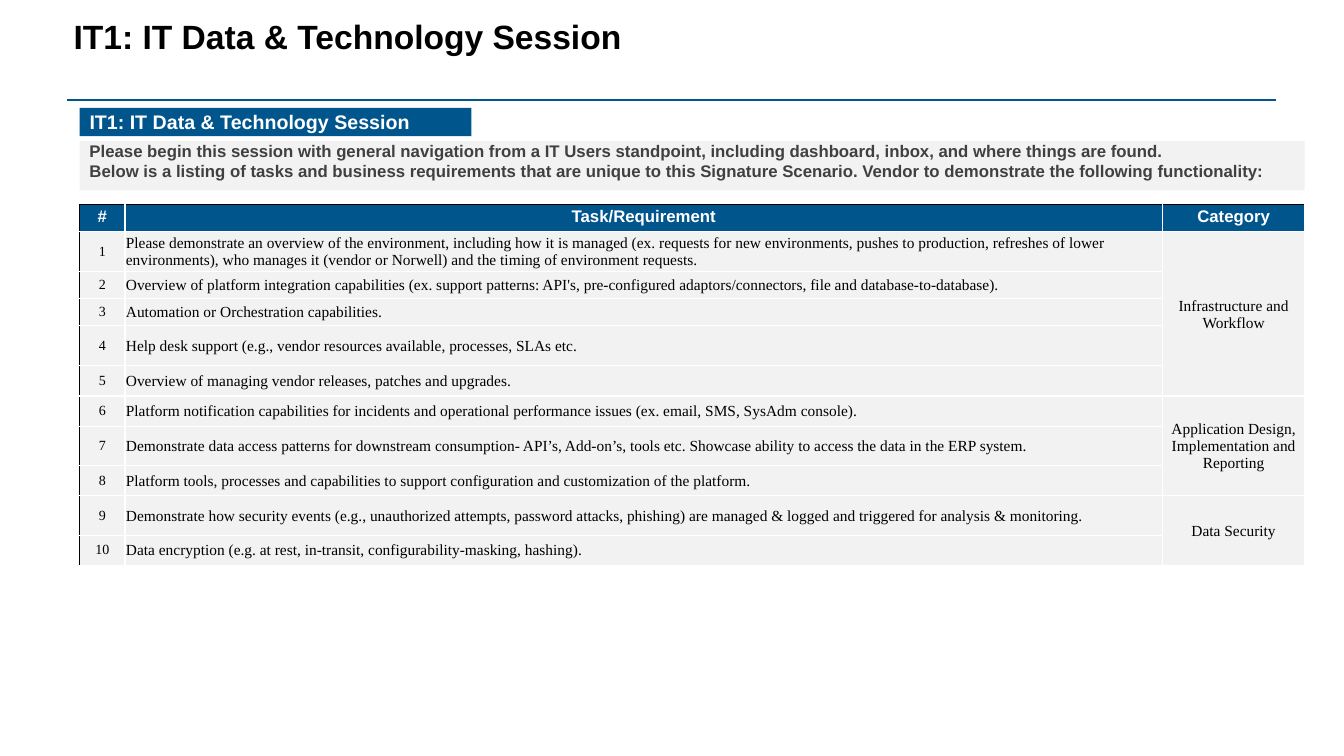
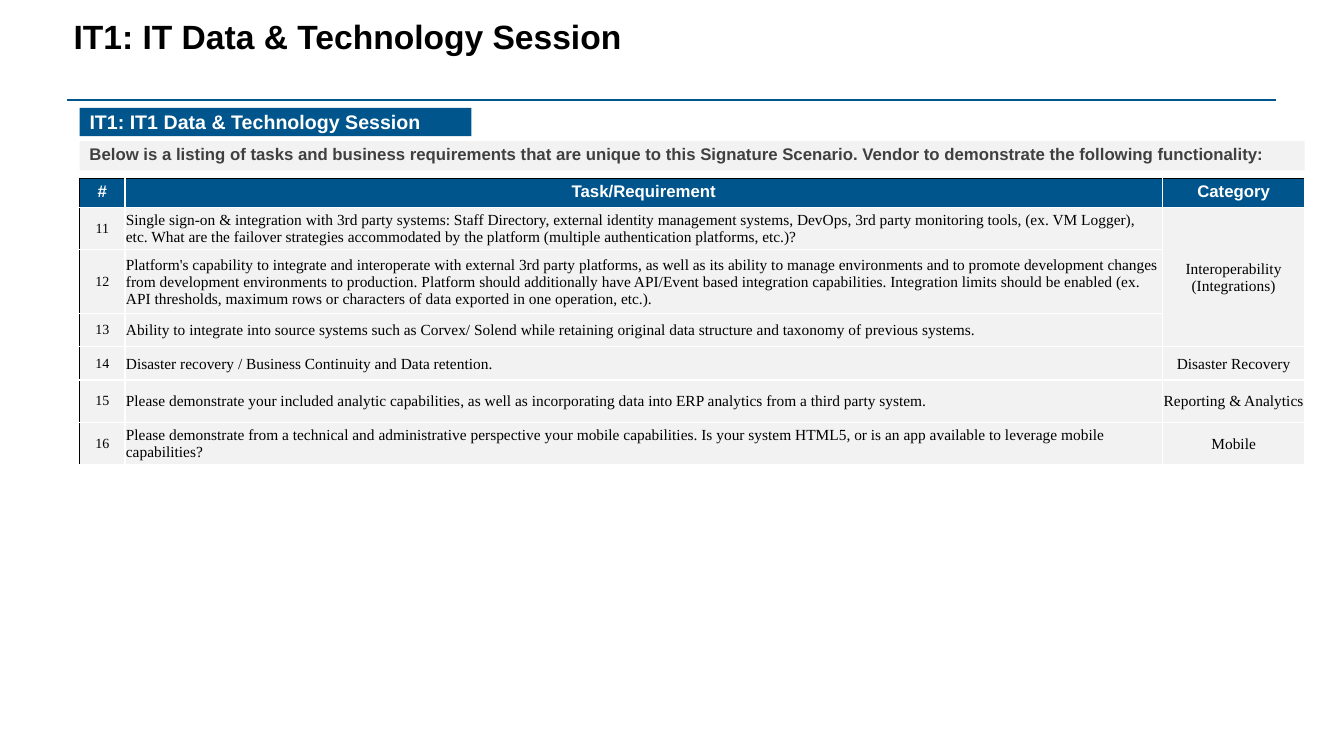
"""Builds the two slides of the data and technology session."""
from pptx import Presentation
from pptx.dml.color import RGBColor
from pptx.enum.shapes import MSO_CONNECTOR as Link, MSO_SHAPE as Shape
from pptx.enum.text import MSO_ANCHOR as Anchor, PP_ALIGN as Align
from pptx.oxml import parse_xml
from pptx.oxml.ns import nsdecls
from pptx.util import Pt

BLUE, GREY, DARK, BLACK, WHITE = "00558C", "F2F2F2", "404040", "000000", "FFFFFF"
LEFT, WIDE = Pt(56.9), Pt(875.5)
COLS = [32.4, 741.6, 101.5]

SANS = {"name": "Arial", "bold": True}
SERIF = {"name": "Times New Roman", "bold": False}
HEAD = {"alignment": Align.CENTER, "line_spacing": Pt(11)}
LOOKS = {
    "title": ({**SANS, "size": Pt(24)}, BLACK,
              {"alignment": Align.LEFT, "line_spacing": 0.9}),
    "bar": ({**SANS, "size": Pt(14)}, WHITE, {"alignment": Align.LEFT}),
    "intro": ({**SANS, "size": Pt(12)}, DARK, {"alignment": Align.LEFT}),
    "head": ({**SANS, "size": Pt(12)}, WHITE, HEAD),
    "num": ({**SERIF, "size": Pt(10)}, BLACK, HEAD),
    "task": ({**SERIF, "size": Pt(11)}, BLACK, {"alignment": Align.LEFT}),
    "group": ({**SERIF, "size": Pt(11)}, BLACK, {"alignment": Align.CENTER}),
}
ROOMY = {"margin_left": Pt(3.6), "margin_right": Pt(3.6),
         "margin_top": Pt(3.6), "margin_bottom": Pt(3.6)}
TIGHT = {"margin_left": Pt(0.7), "margin_right": Pt(0.7),
         "margin_top": Pt(0.7), "margin_bottom": Pt(0)}

TITLE = "IT1: IT Data & Technology Session"
BELOW = ("Below is a listing of tasks and business requirements that are unique to "
         "this Signature Scenario. Vendor to demonstrate the following functionality:")
PAGES = [
    {
        "bar": "IT1: IT Data & Technology Session",
        "intro": ["Please begin this session with general navigation from a IT Users "
                  "standpoint, including dashboard, inbox, and where things are found.",
                  BELOW],
        "strip": 35.3, "text": (97.2, 36), "top": 146.2, "head": 19.4, "first": 1,
        "groups": [
            ("Infrastructure and Workflow", [
                (28.1, "Please demonstrate an overview of the environment, including how "
                       "it is managed (ex. requests for new environments, pushes to "
                       "production, refreshes of lower environments), who manages it "
                       "(vendor or Norwell) and the timing of environment requests."),
                (19.4, "Overview of platform integration capabilities (ex. support "
                       "patterns: API's, pre-configured adaptors/connectors, file and "
                       "database-to-database)."),
                (19.4, "Automation or Orchestration capabilities."),
                (28.8, "Help desk support (e.g., vendor resources available, processes, "
                       "SLAs etc."),
                (21.6, "Overview of managing vendor releases, patches and upgrades."),
            ]),
            ("Application Design, Implementation and Reporting", [
                (21.6, "Platform notification capabilities for incidents and operational "
                       "performance issues (ex. email, SMS, SysAdm console)."),
                (28.1, "Demonstrate data access patterns for downstream consumption- "
                       "API’s, Add-on’s, tools etc. Showcase ability to access the data "
                       "in the ERP system."),
                (21.6, "Platform tools, processes and capabilities to support "
                       "configuration and customization of the platform."),
            ]),
            ("Data Security", [
                (28.1, "Demonstrate how security events (e.g., unauthorized attempts, "
                       "password attacks, phishing) are managed & logged and triggered "
                       "for analysis & monitoring."),
                (21.6, "Data encryption (e.g. at rest, in-transit, "
                       "configurability-masking, hashing)."),
            ]),
        ],
    },
    {
        "bar": "IT1: IT1 Data & Technology Session",
        "intro": [BELOW],
        "strip": 20.9, "text": (99.4, 21.6), "top": 127.4, "head": 20.9, "first": 11,
        "groups": [
            ("Interoperability (Integrations)", [
                (30.2, "Single sign-on & integration with 3rd party systems: Staff "
                       "Directory, external identity management systems, DevOps, 3rd "
                       "party monitoring tools, (ex. VM Logger), etc. What are the "
                       "failover strategies accommodated by the platform (multiple "
                       "authentication platforms, etc.)?"),
                (45.4, "Platform's capability to integrate and interoperate with external "
                       "3rd party platforms, as well as its ability to manage "
                       "environments and to promote development changes from development "
                       "environments to production. Platform should additionally have "
                       "API/Event based integration capabilities. Integration limits "
                       "should be enabled (ex. API thresholds, maximum rows or characters "
                       "of data exported in one operation, etc.)."),
                (23.8, "Ability to integrate into source systems such as Corvex/ Solend "
                       "while retaining original data structure and taxonomy of previous "
                       "systems."),
            ]),
            ("Disaster Recovery", [
                (23.8, "Disaster recovery / Business Continuity and Data retention."),
            ]),
            ("Reporting & Analytics", [
                (30.2, "Please demonstrate your included analytic capabilities, as well "
                       "as incorporating data into ERP analytics from a third party "
                       "system."),
            ]),
            ("Mobile", [
                (30.2, "Please demonstrate from a technical and administrative "
                       "perspective your mobile capabilities. Is your system HTML5, or is "
                       "an app available to leverage mobile capabilities?"),
            ]),
        ],
    },
]


def ink(form, tone):
    if hasattr(form, "solid"):
        form.solid()
        form = form.fore_color
    form.rgb = RGBColor.from_string(tone)


def write(box, lines, look, **frame):
    font, tone, para = LOOKS[look]
    text = box.text_frame
    text.text = "\n".join(lines)
    target = text if hasattr(box, "shape_id") else box
    for key, val in frame.items():
        setattr(target, key, val)
    for item in text.paragraphs:
        for key, val in para.items():
            setattr(item, key, val)
        for key, val in font.items():
            setattr(item.runs[0].font, key, val)
        ink(item.runs[0].font.color, tone)


deck = Presentation()
deck.slide_width, deck.slide_height = Pt(960.5), Pt(540)

for page in PAGES:
    slide = deck.slides.add_slide(deck.slide_layouts[5])
    shapes = slide.shapes

    rule = shapes.add_connector(Link.STRAIGHT, Pt(48.2), Pt(71.6), Pt(912.2), Pt(71.6))
    ink(rule.line.fill, BLUE)
    rule.line.width = Pt(1.5)
    rule._element.spPr.append(parse_xml(f"<a:effectLst {nsdecls('a')}/>"))

    title = shapes.title
    spot = {"left": Pt(45.4), "top": Pt(10.8), "width": Pt(864.7), "height": Pt(46.8)}
    for key, val in spot.items():
        setattr(title, key, val)
    write(title, [TITLE], "title", vertical_anchor=Anchor.TOP)

    strip = shapes.add_shape(Shape.RECTANGLE, LEFT, Pt(100.8), WIDE, Pt(page["strip"]))
    ink(strip.fill, GREY)

    groups = page["groups"]
    tasks = [task for _, part in groups for task in part]
    sizes = [page["head"]] + [size for size, _ in tasks]
    grid = shapes.add_table(len(sizes), len(COLS), LEFT, Pt(page["top"]),
                            WIDE, Pt(sum(sizes))).table
    for col, size in zip(grid.columns, COLS):
        col.width = Pt(size)
    for row, size in zip(grid.rows, sizes):
        row.height = Pt(size)

    for y in range(len(sizes)):
        for x in range(len(COLS)):
            cell = grid.cell(y, x)
            props = cell._tc.get_or_add_tcPr()
            edges = {"L": WHITE if x else BLACK, "R": WHITE,
                     "T": WHITE if y else BLACK, "B": WHITE}
            for side, tone in edges.items():
                props.append(parse_xml(
                    f'<a:ln{side} {nsdecls("a")} w="12700"><a:solidFill>'
                    f'<a:srgbClr val="{tone}"/></a:solidFill></a:ln{side}>'))
            ink(cell.fill, GREY if y else BLUE)

    for x, name in enumerate(["#", "Task/Requirement", "Category"]):
        write(grid.cell(0, x), [name], "head", vertical_anchor=Anchor.MIDDLE, **ROOMY)

    y = 1
    for name, part in groups:
        group = grid.cell(y, 2)
        if len(part) > 1:
            group.merge(grid.cell(y + len(part) - 1, 2))
        write(group, [name], "group", vertical_anchor=Anchor.MIDDLE, **TIGHT)
        for _, task in part:
            num = str(page["first"] + y - 1)
            write(grid.cell(y, 0), [num], "num", vertical_anchor=Anchor.MIDDLE, **ROOMY)
            write(grid.cell(y, 1), [task], "task", vertical_anchor=Anchor.MIDDLE, **TIGHT)
            y += 1

    top, high = page["text"]
    intro = shapes.add_textbox(LEFT, Pt(top), WIDE, Pt(high))
    write(intro, page["intro"], "intro", word_wrap=True)

    bar = shapes.add_shape(Shape.RECTANGLE, LEFT, Pt(77), Pt(280.1), Pt(20.2))
    ink(bar.fill, BLUE)
    write(bar, [page["bar"]], "bar", vertical_anchor=Anchor.MIDDLE)
    for box in (strip, bar):
        box.line.fill.background()
        box.shadow.inherit = False

deck.save("out.pptx")
